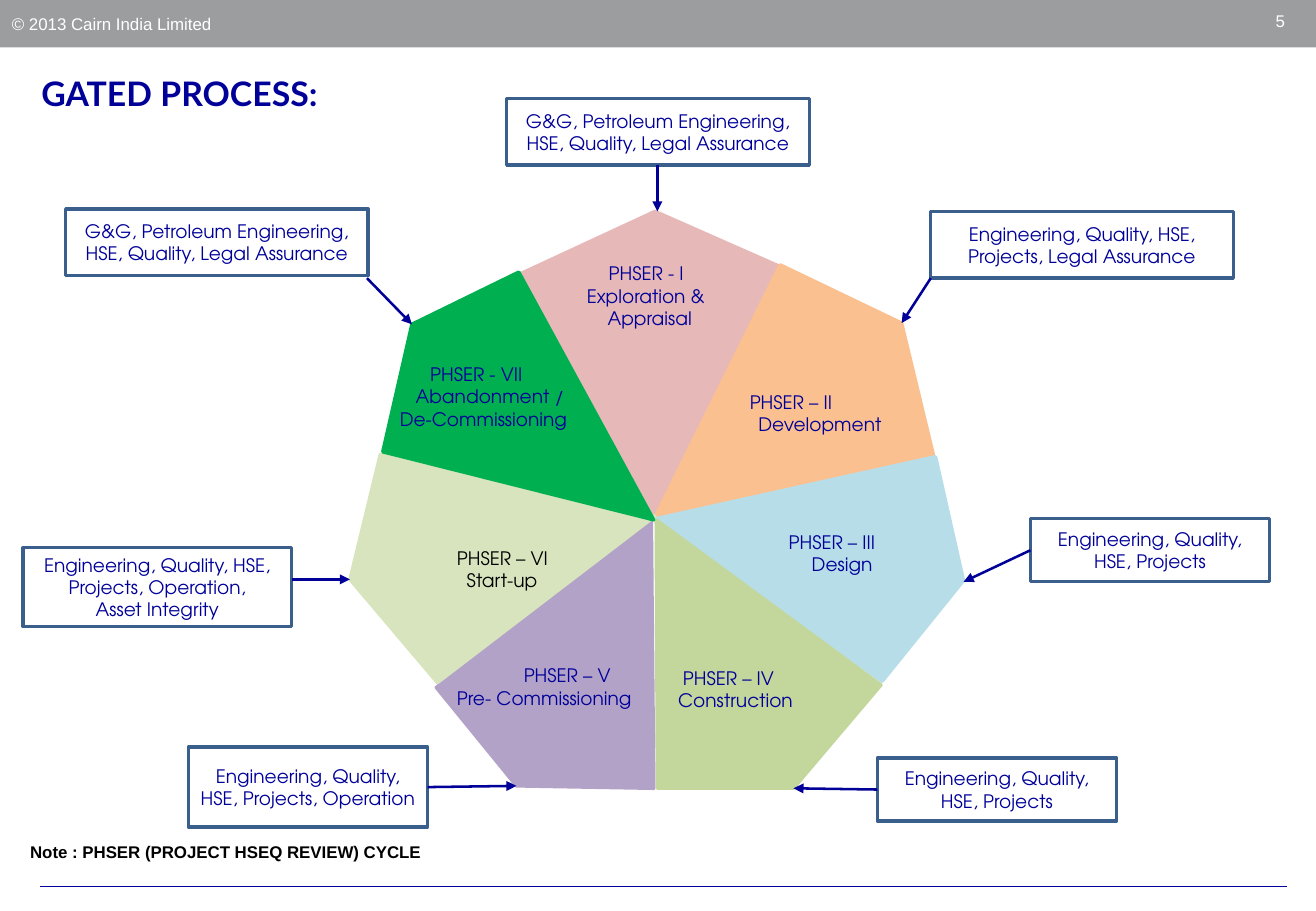
from lxml.etree import SubElement
from pptx import Presentation
from pptx.dml.color import RGBColor
from pptx.enum.shapes import MSO_CONNECTOR as Connector, MSO_SHAPE as Shape
from pptx.enum.text import MSO_ANCHOR as Anchor, PP_ALIGN as Align
from pptx.oxml.ns import qn
from pptx.util import Inches, Pt

NAVY, BLACK, WHITE = "000099", "000000", "FFFFFF"
GREY, STEEL = "9C9D9F", "3A5F8C"
LABEL_FONT = "TeX Gyre Adventor"

# Corner points, fill, top of the label, and each label line with its left edge
SEGMENTS = [
    ([(4.27, 2.26), (5.39, 1.74), (6.41, 2.19), (5.4, 4.26)], "E6B9B8", 2.16,
     [(5.01, "PHSER - I"), (4.83, "Exploration &"), (5.0, "Appraisal")], NAVY),
    ([(6.42, 2.18), (7.42, 2.66), (7.68, 3.74), (5.39, 4.26)], "FAC090", 3.22,
     [(6.17, "PHSER – II"), (6.24, "Development")], NAVY),
    ([(7.7, 3.76), (7.93, 4.78), (7.26, 5.61), (5.4, 4.27)], "B7DEE8", 4.37,
     [(6.49, "PHSER – III"), (6.68, "Design")], NAVY),
    ([(7.25, 5.64), (6.53, 6.49), (5.41, 6.49), (5.4, 4.28)], "C3D69B", 5.49,
     [(5.62, "PHSER – IV"), (5.58, "Construction")], NAVY),
    ([(5.38, 6.49), (4.25, 6.47), (3.59, 5.66), (5.36, 4.27)], "B3A2C7", 5.47,
     [(4.31, "PHSER – V"), (3.76, "Pre- Commissioning")], NAVY),
    ([(3.6, 5.62), (2.88, 4.77), (3.13, 3.74), (5.39, 4.25)], "D7E4BD", 4.5,
     [(3.76, "PHSER – VI"), (3.84, "Start-up")], BLACK),
    ([(3.15, 3.72), (3.39, 2.67), (4.27, 2.24), (5.38, 4.28)], "00B050", 2.99,
     [(3.54, "PHSER - VII"), (3.42, "Abandonment /"),
      (3.29, "De-Commissioning")], NAVY),
]

EXPLORATION_TEAM = ["G&G, Petroleum Engineering, HSE, Quality, Legal Assurance"]
PROJECT_TEAM = ["Engineering, Quality, HSE, Projects"]

# Box place, its lines, and the arrow from the box to a corner
REVIEW_TEAMS = [
    ((4.17, 0.81, 2.49, 0.55), EXPLORATION_TEAM, (5.41, 1.36), (5.41, 1.74)),
    ((7.66, 1.74, 2.49, 0.55),
     ["Engineering, Quality, HSE, Projects, Legal Assurance"],
     (7.66, 2.29), (7.42, 2.66)),
    ((8.48, 4.27, 1.97, 0.52), PROJECT_TEAM, (8.48, 4.53), (7.93, 4.79)),
    ((7.22, 6.24, 1.97, 0.52), PROJECT_TEAM, (7.22, 6.5), (6.53, 6.49)),
    ((1.55, 6.15, 1.97, 0.66),
     ["Engineering, Quality, HSE, Projects, Operation"],
     (3.52, 6.48), (4.25, 6.47)),
    ((0.19, 4.51, 2.21, 0.65),
     ["Engineering, Quality, HSE,", "Projects, Operation,", "Asset Integrity"],
     (2.4, 4.77), (2.88, 4.77)),
    ((0.54, 1.72, 2.49, 0.55), EXPLORATION_TEAM, (3.02, 2.29), (3.39, 2.67)),
]


def color(value):
    return RGBColor.from_string(value)


def inches(values):
    return [Inches(value) for value in values]


def set_attributes(target, values):
    for name, value in values.items():
        setattr(target, name, value)


def write(box, lines, ink, size=11, font=LABEL_FONT, bold=False,
          align=Align.LEFT, **frame_format):
    """Fill a shape with one paragraph per line and return the paragraphs."""
    frame = box.text_frame
    set_attributes(frame, {"word_wrap": True, **frame_format})
    frame.text = "\n".join(lines)
    for para in frame.paragraphs:
        para.alignment = align
        for span in para.runs:
            set_attributes(span.font,
                           {"size": Pt(size), "name": font, "bold": bold})
            span.font.color.rgb = color(ink)
    return frame.paragraphs


def paint(shape, fill=None, line=None):
    shape.shadow.inherit = False
    if fill:
        shape.fill.solid()
        shape.fill.fore_color.rgb = color(fill)
    else:
        shape.fill.background()
    if line:
        shape.line.color.rgb = color(line)
        shape.line.width = Pt(2)
    else:
        shape.line.fill.background()


def add_box(page, place, fill=None, line=None):
    box = page.shapes.add_shape(Shape.RECTANGLE, *inches(place))
    paint(box, fill, line)
    return box


def add_text(page, place, text, ink, bold=False):
    box = page.shapes.add_textbox(*inches(place))
    write(box, [text], ink, 10, "Arial", bold)


def add_line(page, start, end, width, arrow=False):
    line = page.shapes.add_connector(Connector.STRAIGHT, *inches(start + end))
    line.line.color.rgb = color(NAVY)
    line.line.width = Pt(width)
    if arrow:
        SubElement(line.line._get_or_add_ln(), qn("a:tailEnd"), type="triangle")
    SubElement(line._element.spPr, qn("a:effectLst"))


def add_segment(page, corners, fill, label_top, label, ink):
    """Draw one wedge of the heptagon with its label lines inside."""
    points = [tuple(inches(corner)) for corner in corners]
    builder = page.shapes.build_freeform(*points[0], scale=1.0)
    builder.add_line_segments(points[1:], close=True)
    wedge = builder.convert_to_shape()
    paint(wedge, fill, fill)
    label_left = min(left for left, _ in label)
    paras = write(wedge, [text for _, text in label], ink,
                  vertical_anchor=Anchor.TOP,
                  margin_left=Inches(label_left) - wedge.left,
                  margin_top=Inches(label_top) - wedge.top,
                  margin_right=0, margin_bottom=0)
    for para, (left, _) in zip(paras, label):
        indent = Inches(round(left - label_left, 2))
        para._p.get_or_add_pPr().set("marL", str(indent))


def add_review_team(page, place, lines, start, end):
    box = add_box(page, place, line=STEEL)
    write(box, lines, NAVY, align=Align.CENTER, vertical_anchor=Anchor.MIDDLE)
    add_line(page, start, end, 1.5, arrow=True)


def add_title(page, text):
    title = page.shapes.title
    left, top, width, height = inches((0.34, 0.57, 9.11, 0.39))
    set_attributes(title, {"left": left, "top": top,
                           "width": width, "height": height})
    write(title, [text], NAVY, 20, "Lato", True, vertical_anchor=Anchor.MIDDLE,
          margin_left=0, margin_top=0, margin_right=0, margin_bottom=0)


def add_page_frame(page):
    bar = add_box(page, (0, 0, 10.83, 0.39), fill=GREY)
    write(bar, ["© 2013 Cairn India Limited"], WHITE, 10, "Arial",
          vertical_anchor=Anchor.MIDDLE)
    add_text(page, (10.4, 0.04, 0.37, 0.27), "5", WHITE)
    add_line(page, (0.33, 7.3), (10.59, 7.3), 0.75)


def main():
    deck = Presentation()
    deck.slide_width, deck.slide_height = inches((10.83, 7.5))
    page = deck.slides.add_slide(deck.slide_layouts[5])
    add_page_frame(page)
    add_title(page, "GATED PROCESS:")
    for segment in SEGMENTS:
        add_segment(page, *segment)
    for team in REVIEW_TEAMS:
        add_review_team(page, *team)
    add_text(page, (0.15, 6.88, 8.56, 0.27),
             "Note : PHSER (PROJECT HSEQ REVIEW) CYCLE", BLACK, bold=True)
    deck.save("out.pptx")


if __name__ == "__main__":
    main()
